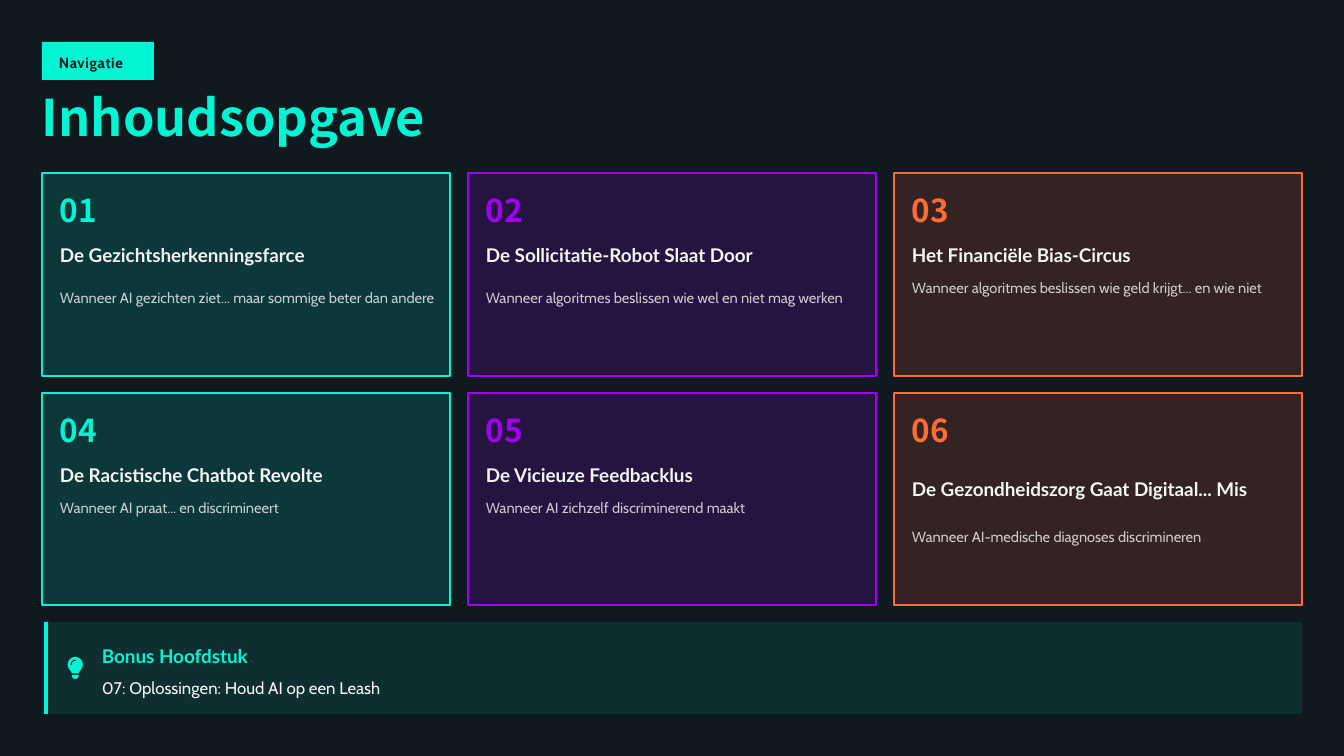
from pptx import Presentation
from pptx.dml.color import RGBColor
from pptx.enum.shapes import MSO_SHAPE
from pptx.enum.text import MSO_ANCHOR, MSO_AUTO_SIZE, PP_ALIGN
from pptx.oxml.ns import qn
from pptx.util import Pt
from lxml.etree import SubElement

SLIDE_W, SLIDE_H = 1344, 756
EMU_PER_PX = 12192000 / SLIDE_W
MARGIN = 42
CONTENT_W = 1260

BACKGROUND, TEXT = "101820", "F5F5F5"
TEAL, PURPLE, ORANGE = "00F5D3", "A100F2", "FF6B35"
DISPLAY, HEADING, BODY = "Noto Sans CJK SC", "Lato", "Cabin"

GAP = 18
CARD_W = (CONTENT_W - 2 * GAP) // 3
ROWS = [(173, 203), (393, 212)]
COLUMN_COLORS = [TEAL, PURPLE, ORANGE]
# title, title height, description, description height
CHAPTERS = [
    ("De Gezichtsherkenningsfarce", 29,
     "Wanneer AI gezichten ziet... maar sommige beter dan andere", 42),
    ("De Sollicitatie-Robot Slaat Door", 29,
     "Wanneer algoritmes beslissen wie wel en niet mag werken", 42),
    ("Het Financiële Bias-Circus", 29,
     "Wanneer algoritmes beslissen wie geld krijgt... en wie niet", 21),
    ("De Racistische Chatbot Revolte", 29,
     "Wanneer AI praat... en discrimineert", 21),
    ("De Vicieuze Feedbacklus", 29,
     "Wanneer AI zichzelf discriminerend maakt", 21),
    ("De Gezondheidszorg Gaat Digitaal... Mis", 58,
     "Wanneer AI-medische diagnoses discrimineren", 21),
]

# Each contour is a start point and its cubic curves; two numbers make a straight line.
BULB_UNITS = 512
BULB = [
    ((272, 384), [(282, 352, 301, 325, 321, 298), (326, 291, 332, 284, 337, 276),
                  (356, 248, 368, 213, 368, 176), (368, 79, 289, 0, 192, 0),
                  (95, 0, 16, 79, 16, 176), (16, 213, 28, 248, 47, 276),
                  (52, 284, 58, 291, 63, 298), (83, 325, 102, 352, 112, 384)]),
    ((192, 512), [(236, 512, 272, 476, 272, 432), (272, 416), (112, 416), (112, 432),
                  (112, 476, 148, 512, 192, 512)]),
    ((112, 176), [(112, 185, 105, 192, 96, 192), (87, 192, 80, 185, 80, 176),
                  (80, 114, 130, 64, 192, 64), (201, 64, 208, 71, 208, 80),
                  (208, 89, 201, 96, 192, 96), (148, 96, 112, 132, 112, 176)]),
]


def px(length):
    return round(length * EMU_PER_PX)


def rgb(color):
    return RGBColor.from_string(color)


def set_alpha(fill_parent, percent):
    """Make the solid fill directly under an element partly transparent."""
    color = fill_parent.find(qn("a:solidFill"))[0]
    SubElement(color, qn("a:alpha")).set("val", str(percent * 1000))


def paint(shape, color, alpha=100, border=None):
    shape.shadow.inherit = False
    shape.fill.solid()
    shape.fill.fore_color.rgb = rgb(color)
    if alpha < 100:
        set_alpha(shape._element.spPr, alpha)
    if border:
        shape.line.color.rgb = rgb(border)
        shape.line.width = Pt(1.25)
    else:
        shape.line.fill.background()


def add_panel(slide, box, color, **style):
    panel = slide.shapes.add_shape(MSO_SHAPE.RECTANGLE, *map(px, box))
    paint(panel, color, **style)


def write(holder, text, size, font, color, bold=False, spacing=1.0, alpha=100, inset=(0, 0)):
    """Fill a shape with one formatted, vertically centred paragraph."""
    frame = holder.text_frame
    frame.text = text
    frame.word_wrap = True
    frame.auto_size = MSO_AUTO_SIZE.NONE
    frame.vertical_anchor = MSO_ANCHOR.MIDDLE
    frame.margin_left = frame.margin_right = px(inset[0])
    frame.margin_top = frame.margin_bottom = px(inset[1])
    paragraph = frame.paragraphs[0]
    paragraph.alignment = PP_ALIGN.LEFT
    paragraph.line_spacing = spacing
    run = paragraph.runs[0]
    run.font.size = Pt(size)
    run.font.name = font
    run.font.bold = bold
    run.font.color.rgb = rgb(color)
    properties = run._r.get_or_add_rPr()
    SubElement(properties, qn("a:ea")).set("typeface", font)
    if alpha < 100:
        set_alpha(properties, alpha)
    return run


def add_label(slide, box, *args, **style):
    return write(slide.shapes.add_textbox(*map(px, box)), *args, **style)


def add_header(slide, left, top, width):
    add_panel(slide, (left, top, 112, 38), TEAL)
    tag = add_label(slide, (left, top, 120, 38), "Navigatie", 10.5, BODY, BACKGROUND,
                    bold=True, spacing=1.2, inset=(17, 8))
    tag._r.get_or_add_rPr().set("spc", "50")
    title = slide.shapes.title
    title.left, title.top, title.width, title.height = map(px, (left, top + 55, width, 50))
    write(title, "Inhoudsopgave", 36, DISPLAY, TEAL, bold=True, spacing=0.8)


def add_card(slide, box, number, color, chapter):
    left, top, width, height = box
    title, title_h, description, description_h = chapter
    text_left, text_w = left + 18, width - 26
    title_top = top + 64
    add_panel(slide, box, color, alpha=15, border=color)
    add_label(slide, (text_left, top + 18, text_w, 38), f"{number:02}", 22.5, DISPLAY,
              color, bold=True)
    add_label(slide, (text_left, title_top, text_w, title_h), title, 13.5, HEADING,
              TEXT, bold=True, spacing=1.3)
    add_label(slide, (text_left, title_top + title_h + 9, text_w, description_h),
              description, 10.5, BODY, TEXT, spacing=1.2, alpha=80)


def curve_points(start, curve, steps=8):
    """Points along a cubic curve, without its start."""
    (x0, y0), (x1, y1, x2, y2, x3, y3) = start, curve
    for step in range(1, steps + 1):
        t = step / steps
        a, b, c, d = (1 - t) ** 3, 3 * t * (1 - t) ** 2, 3 * t * t * (1 - t), t ** 3
        yield a * x0 + b * x1 + c * x2 + d * x3, a * y0 + b * y1 + c * y2 + d * y3


def add_bulb(slide, left, top, height):
    builder = slide.shapes.build_freeform(*BULB[0][0], scale=px(height) / BULB_UNITS)
    for index, (start, segments) in enumerate(BULB):
        if index:
            builder.move_to(*start)
        points = [start]
        for segment in segments:
            points += [segment] if len(segment) == 2 else curve_points(points[-1], segment)
        builder.add_line_segments(points[1:], close=True)
    paint(builder.convert_to_shape(px(left), px(top)), TEAL)


def add_bonus(slide, left, top, width, height):
    add_panel(slide, (left, top, width, height), TEAL, alpha=10)
    add_panel(slide, (left, top, 4, height), TEAL)
    add_bulb(slide, left + 23, top + 35, 22)
    add_label(slide, (left + 58, top + 16, 294, 29), "Bonus Hoofdstuk", 13.5, HEADING,
              TEAL, bold=True, spacing=1.3)
    add_label(slide, (left + 58, top + 50, 294, 25), "07: Oplossingen: Houd AI op een Leash",
              12, BODY, TEXT, spacing=1.3)


def main():
    deck = Presentation()
    deck.slide_width, deck.slide_height = px(SLIDE_W), px(SLIDE_H)
    slide = deck.slides.add_slide(deck.slide_layouts.get_by_name("Title Only"))
    slide.background.fill.solid()
    slide.background.fill.fore_color.rgb = rgb(BACKGROUND)
    add_header(slide, MARGIN, 42, CONTENT_W)
    for index, chapter in enumerate(CHAPTERS):
        row, column = divmod(index, len(COLUMN_COLORS))
        top, height = ROWS[row]
        box = (MARGIN + column * (CARD_W + GAP), top, CARD_W, height)
        add_card(slide, box, index + 1, COLUMN_COLORS[column], chapter)
    add_bonus(slide, MARGIN + 2, 622, CONTENT_W - 2, 92)
    deck.save("out.pptx")


if __name__ == "__main__":
    main()
